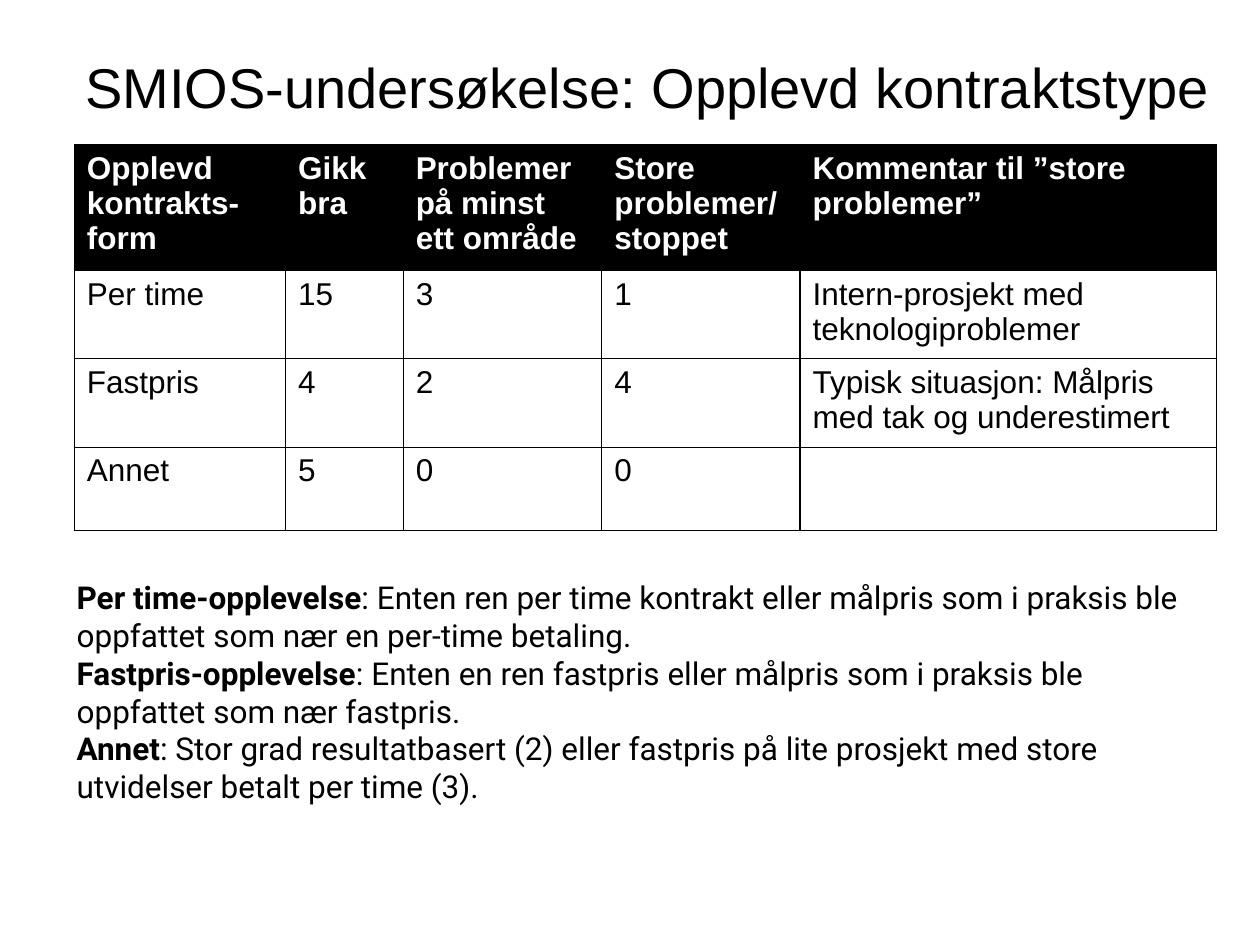
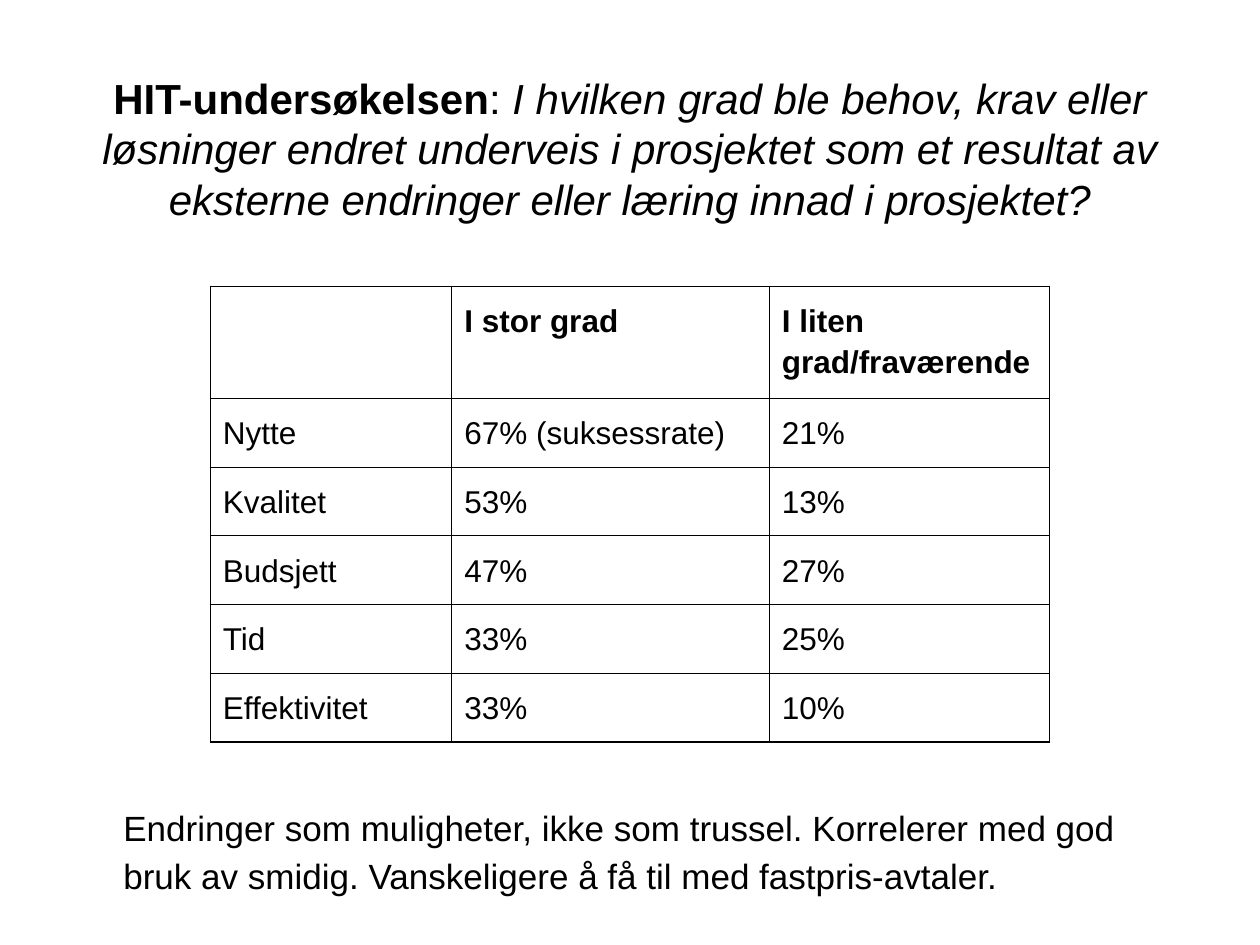
import pptx
import pptx.dml.color
import pptx.enum.text
import pptx.util
from lxml import etree
from pptx.oxml.ns import qn

Pt = pptx.util.Pt
ALIGN = pptx.enum.text.PP_ALIGN
ANCHOR = pptx.enum.text.MSO_ANCHOR

# Shared look
BLACK, WHITE = "000000", "FFFFFF"
FONT, NOTE_FONT = "Arial", "Roboto"
TABLE_SIZE = 18
BORDER_WIDTH = 0.75
SIDE_INSET = 7.2
BOLD, ITALIC = {"bold": True}, {"italic": True}

# Contract types: wording
CONTRACT_ROWS = [
    ["Opplevd kontrakts-form", "Gikk bra", "Problemer på minst ett område",
     "Store problemer/ stoppet", "Kommentar til ”store problemer”"],
    ["Per time", "15", "3", "1", "Intern-prosjekt med teknologiproblemer"],
    ["Fastpris", "4", "2", "4",
     "Typisk situasjon: Målpris med tak og underestimert"],
    ["Annet", "5", "0", "0", ""],
]
CONTRACT_NOTES = {
    "Per time-opplevelse": "Enten ren per time kontrakt eller målpris som i "
                           "praksis ble oppfattet som nær en per-time betaling.",
    "Fastpris-opplevelse": "Enten en ren fastpris eller målpris som i praksis "
                           "ble oppfattet som nær fastpris.",
    "Annet": "Stor grad resultatbasert (2) eller fastpris på lite prosjekt med "
             "store utvidelser betalt per time (3).",
}

# Degree of change: wording
CHANGE_QUESTION = ("I hvilken grad ble behov, krav eller løsninger endret "
                   "underveis i prosjektet som et resultat av eksterne "
                   "endringer eller læring innad i prosjektet?")
CHANGE_ROWS = [
    ["", "I stor grad", "I liten grad/fraværende"],
    ["Nytte", "67% (suksessrate)", "21%"],
    ["Kvalitet", "53%", "13%"],
    ["Budsjett", "47%", "27%"],
    ["Tid", "33%", "25%"],
    ["Effektivitet", "33%", "10%"],
]
CHANGE_CONCLUSION = ("Endringer som muligheter, ikke som trussel. Korrelerer "
                     "med god bruk av smidig. Vanskeligere å få til med "
                     "fastpris-avtaler.")


def rgb(hex_colour):
    return pptx.dml.color.RGBColor.from_string(hex_colour)


def set_attributes(target, values):
    for name, value in values.items():
        setattr(target, name, value)


def add_run(paragraph, text, size, font=FONT, colour=BLACK, style=None):
    run = paragraph.add_run()
    run.text = text
    set_attributes(run.font, {"name": font, "size": Pt(size), "bold": False,
                              "italic": False, **(style or {})})
    run.font.color.rgb = rgb(colour)


def add_text(slide, box, paragraphs, size, font=FONT, inset=3.6,
             anchor=ANCHOR.TOP, layout=None):
    """Each paragraph is a list of (text, style) runs."""
    frame = slide.shapes.add_textbox(*map(Pt, box)).text_frame
    set_attributes(frame, {
        "word_wrap": True, "vertical_anchor": anchor,
        "margin_left": Pt(SIDE_INSET), "margin_right": Pt(SIDE_INSET),
        "margin_top": Pt(inset), "margin_bottom": Pt(inset)})
    for index, runs in enumerate(paragraphs):
        paragraph = frame.add_paragraph() if index else frame.paragraphs[0]
        set_attributes(paragraph, layout or {})
        for text, style in runs:
            add_run(paragraph, text, size, font, style=style)


def add_title(slide, box, runs, size, inset):
    add_text(slide, box, [runs], size, inset=inset, anchor=ANCHOR.MIDDLE,
             layout={"alignment": ALIGN.CENTER})


def add_borders(cell):
    properties = cell._tc.get_or_add_tcPr()
    for side in ("a:lnL", "a:lnR", "a:lnT", "a:lnB"):
        line = etree.SubElement(properties, qn(side), w=str(Pt(BORDER_WIDTH)))
        fill = etree.SubElement(line, qn("a:solidFill"))
        etree.SubElement(fill, qn("a:srgbClr"), val=BLACK)


def add_table(slide, left, top, widths, heights, rows, inset=3.6,
              line_spacing=1.0, header_fill=None):
    table = slide.shapes.add_table(
        len(rows), len(widths), Pt(left), Pt(top),
        Pt(sum(widths)), Pt(sum(heights))).table
    set_attributes(table, {"first_row": False, "horz_banding": False})
    for column, width in zip(table.columns, widths):
        column.width = Pt(width)
    for row, height in zip(table.rows, heights):
        row.height = Pt(height)
    for row_index, texts in enumerate(rows):
        is_header = row_index == 0
        filled = is_header and header_fill
        for column_index, text in enumerate(texts):
            cell = table.cell(row_index, column_index)
            set_attributes(cell, {
                "margin_left": Pt(SIDE_INSET), "margin_right": Pt(SIDE_INSET),
                "margin_top": Pt(inset), "margin_bottom": Pt(inset)})
            add_borders(cell)
            if filled:
                cell.fill.solid()
                cell.fill.fore_color.rgb = rgb(header_fill)
            else:
                cell.fill.background()
            if text:
                paragraph = cell.text_frame.paragraphs[0]
                paragraph.line_spacing = line_spacing
                add_run(paragraph, text, TABLE_SIZE,
                        colour=WHITE if filled else BLACK,
                        style={"bold": is_header})


def build_contract_slide(slide):
    add_title(slide, (36, 21.6, 668.2, 55.4),
              [("SMIOS-undersøkelse: Opplevd kontraktstype", {})], 32, inset=3.6)
    add_table(slide, 42.5, 82.6, [120.7, 67.2, 113.5, 113.3, 238],
              [68, 47.5, 47.5, 47.5], CONTRACT_ROWS, header_fill=BLACK)
    add_text(slide, (36.7, 326.9, 651.6, 203.8),
             [[(term, BOLD), (": " + meaning, {})]
              for term, meaning in CONTRACT_NOTES.items()],
             18, font=NOTE_FONT)


def build_change_slide(slide):
    add_title(slide, (36, 39.6, 648, 90),
              [("HIT-undersøkelsen", BOLD), (": ", {}),
               (CHANGE_QUESTION, ITALIC)], 24, inset=7.2)
    add_table(slide, 120.2, 163.6, [138, 181.4, 160.4], [60.4] + [37.5] * 5,
              CHANGE_ROWS, inset=7.2, line_spacing=1.15)
    add_text(slide, (63.4, 446.4, 614.9, 77), [[(CHANGE_CONCLUSION, {})]], 20,
             inset=7.2, anchor=ANCHOR.MIDDLE,
             layout={"line_spacing": 1.15, "space_before": Pt(8)})


def main():
    presentation = pptx.Presentation()
    set_attributes(presentation, {"slide_width": Pt(720),
                                  "slide_height": Pt(540)})
    blank_layout = presentation.slide_layouts[6]
    for build in (build_contract_slide, build_change_slide):
        build(presentation.slides.add_slide(blank_layout))
    presentation.save("out.pptx")


if __name__ == "__main__":
    main()
